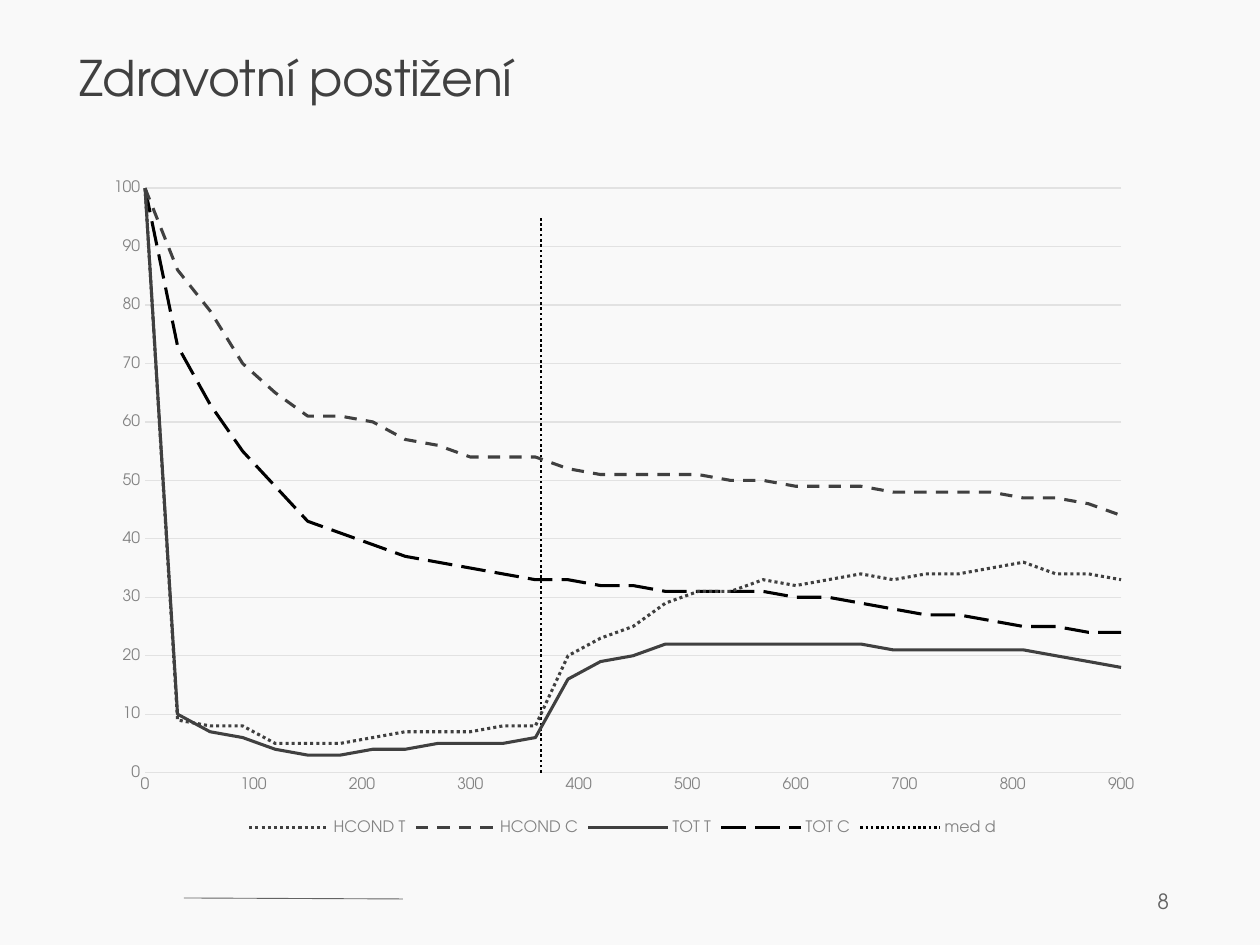
from lxml import etree
from pptx import Presentation
from pptx.chart.data import XyChartData
from pptx.dml.color import RGBColor
from pptx.enum.chart import XL_CHART_TYPE as ChartType, XL_LEGEND_POSITION as LegendPosition
from pptx.enum.chart import XL_MARKER_STYLE as Marker, XL_TICK_MARK as TickMark
from pptx.enum.dml import MSO_LINE_DASH_STYLE as Dash
from pptx.enum.shapes import MSO_CONNECTOR as Connector
from pptx.enum.text import MSO_ANCHOR as Anchor, PP_ALIGN as Align
from pptx.oxml import parse_xml
from pptx.oxml.ns import nsdecls, qn
from pptx.util import Emu, Pt

FONT = "TeX Gyre Adventor"
PAPER = RGBColor(0xF9, 0xF9, 0xF9)
DARK = RGBColor(0x40, 0x40, 0x40)
BLACK = RGBColor(0, 0, 0)
GRAY = RGBColor(0x63, 0x63, 0x63)
LABEL = RGBColor(0x83, 0x83, 0x83)
GRID = RGBColor(0xE2, 0xE2, 0xE2)

# Content: survival curves sampled every 30 days
TITLE = "Zdravotní postižení"
PAGE_NUMBER = "8"
DAYS = list(range(0, 901, 30))
CURVES = [
    ("HCOND T", DARK, 1.75, Dash.ROUND_DOT, DAYS,
     [100, 9, 8, 8, 5, 5, 5, 6, 7, 7, 7, 8, 8, 20, 23, 25, 29, 31, 31, 33, 32,
      33, 34, 33, 34, 34, 35, 36, 34, 34, 33]),
    ("HCOND C", DARK, 1.75, Dash.DASH, DAYS,
     [100, 86, 79, 70, 65, 61, 61, 60, 57, 56, 54, 54, 54, 52, 51, 51, 51, 51,
      50, 50, 49, 49, 49, 48, 48, 48, 48, 47, 47, 46, 44]),
    ("TOT T", DARK, 1.75, Dash.SOLID, DAYS,
     [100, 10, 7, 6, 4, 3, 3, 4, 4, 5, 5, 5, 6, 16, 19, 20, 22, 22, 22, 22, 22,
      22, 22, 21, 21, 21, 21, 21, 20, 19, 18]),
    ("TOT C", BLACK, 1.75, Dash.LONG_DASH, DAYS,
     [100, 73, 63, 55, 49, 43, 41, 39, 37, 36, 35, 34, 33, 33, 32, 32, 31, 31,
      31, 31, 30, 30, 29, 28, 27, 27, 26, 25, 25, 24, 24]),
    ("med d", BLACK, 1.5, Dash.ROUND_DOT, [365, 365], [0, 95]),
]
PLOT_AREA = {"x": 0.05, "y": 0.03, "w": 0.92, "h": 0.87}  # shares of the chart


def px(length):
    return Emu(length * 914400 // 126)


def style_font(font, size, color):
    font.name, font.size, font.bold = FONT, Pt(size), False
    font.color.rgb = color


def style_line(line, color, width, dash=Dash.SOLID):
    line.color.rgb = color
    line.width = Pt(width)
    line.dash_style = dash


def add_text(page, text, at, size, color, align=Align.LEFT, anchor=Anchor.TOP,
             inset=0, spacing=1.0):
    box = page.shapes.add_textbox(*map(px, at))
    frame = box.text_frame
    frame.word_wrap = True
    frame.vertical_anchor = anchor
    frame.margin_left = frame.margin_right = px(inset)
    frame.margin_top = frame.margin_bottom = px(inset // 2)
    para = frame.paragraphs[0]
    para.alignment = align
    para.line_spacing = spacing
    span = para.add_run()
    span.text = text
    style_font(span.font, size, color)


def add_curves(page, at):
    data = XyChartData(number_format="0")
    for name, _, _, _, days, shares in CURVES:
        series = data.add_series(name)
        for day, share in zip(days, shares):
            series.add_data_point(day, share)
    chart = page.shapes.add_chart(
        ChartType.XY_SCATTER_LINES_NO_MARKERS, *map(px, at), data).chart
    chart.has_title = False
    style_font(chart.font, 10, DARK)

    for series, (_, color, width, dash, _, _) in zip(chart.plots[0].series, CURVES):
        style_line(series.format.line, color, width, dash)
        series.marker.style = Marker.NONE
        series.smooth = False

    # Axes and grid
    for axis, maximum, step in ((chart.category_axis, 900, 100),
                                (chart.value_axis, 100, 10)):
        axis.minimum_scale, axis.maximum_scale, axis.major_unit = 0, maximum, step
        axis.major_tick_mark = axis.minor_tick_mark = TickMark.NONE
        style_font(axis.tick_labels.font, 9, LABEL)
    chart.category_axis.has_major_gridlines = False
    style_line(chart.category_axis.format.line, GRID, 0.75)
    chart.value_axis.has_major_gridlines = True
    style_line(chart.value_axis.major_gridlines.format.line, GRID, 0.75)
    chart.value_axis.format.line.fill.background()

    chart.has_legend = True
    chart.legend.position = LegendPosition.BOTTOM
    chart.legend.include_in_layout = False
    style_font(chart.legend.font, 9, LABEL)

    # Fixed inner plot area
    plot_area = chart.plots[0]._element.getparent()
    for old in plot_area.findall(qn("c:layout")):
        plot_area.remove(old)
    sizes = "".join(f'<c:{key} val="{share}"/>' for key, share in PLOT_AREA.items())
    plot_area.insert(0, parse_xml(
        f'<c:layout {nsdecls("c")}><c:manualLayout><c:layoutTarget val="inner"/>'
        f'<c:xMode val="edge"/><c:yMode val="edge"/>{sizes}'
        '</c:manualLayout></c:layout>'))


def main():
    deck = Presentation()
    deck.slide_width, deck.slide_height = px(1260), px(945)
    page = deck.slides.add_slide(deck.slide_layouts[6])
    page.background.fill.solid()
    page.background.fill.fore_color.rgb = PAPER

    # Footer rule and page number
    rule = page.shapes.add_connector(Connector.STRAIGHT, px(184), px(898), px(403), px(899))
    style_line(rule.line, GRAY, 0.5)
    etree.SubElement(rule._element.spPr, qn("a:effectLst"))
    add_text(page, PAGE_NUMBER, (897, 876, 284, 50), 12, GRAY,
             align=Align.RIGHT, anchor=Anchor.MIDDLE, inset=12)

    # Title and chart
    add_text(page, TITLE, (79, 59, 1101, 50), 28, DARK, spacing=0.8)
    add_curves(page, (92, 168, 1061, 672))
    deck.save("out.pptx")


if __name__ == "__main__":
    main()
